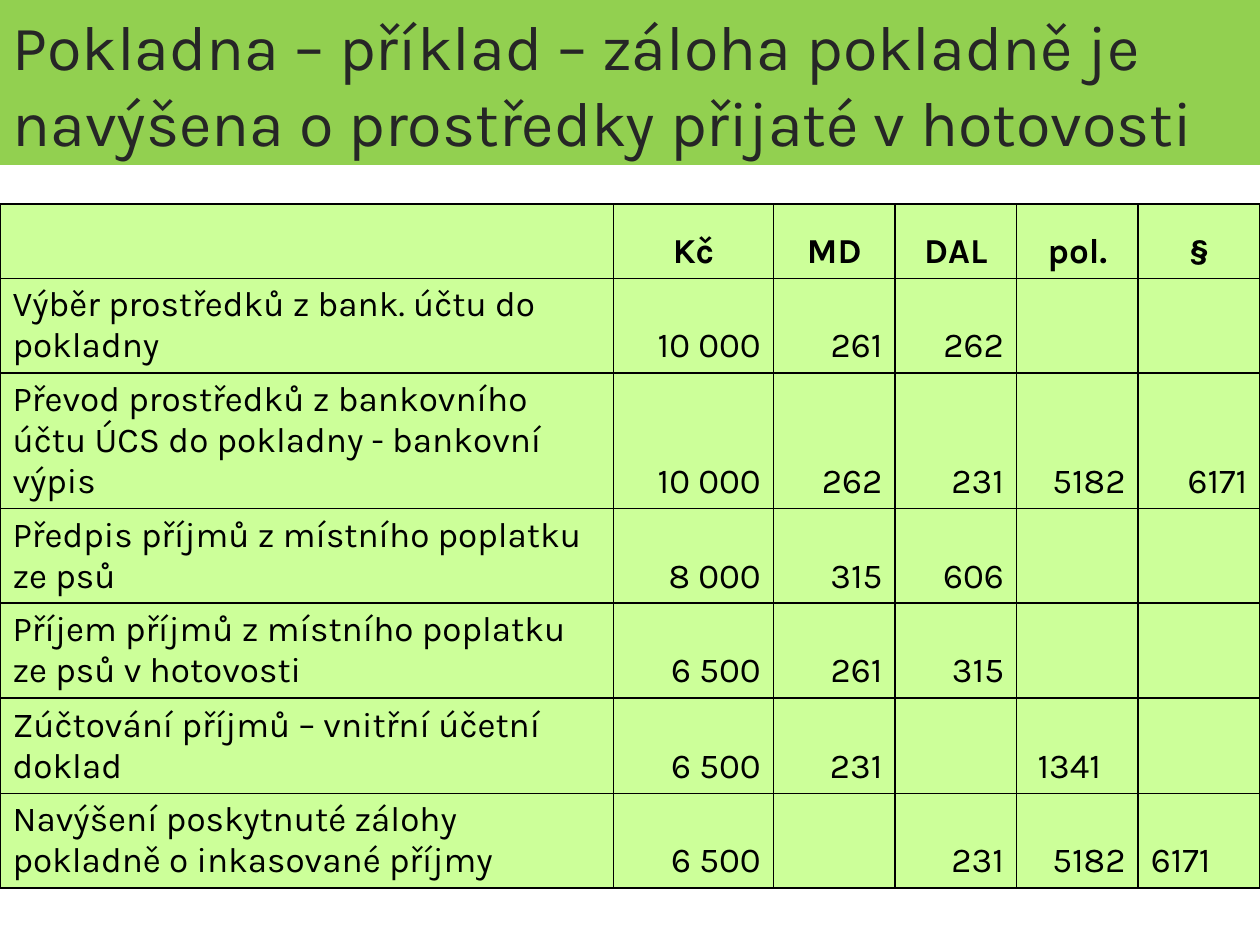
from lxml import etree
from pptx import Presentation
from pptx.dml.color import RGBColor
from pptx.enum.text import MSO_ANCHOR, MSO_AUTO_SIZE, PP_ALIGN
from pptx.oxml.ns import qn
from pptx.util import Pt

LEFT, MID, RIGHT = PP_ALIGN.LEFT, PP_ALIGN.CENTER, PP_ALIGN.RIGHT
BOTTOM = MSO_ANCHOR.BOTTOM
FIXED = MSO_AUTO_SIZE.NONE
FACE = "Karla"
HUES = {"band": "92D050", "title": "262626", "cell": "CCFF99", "ink": "000000"}
TITLE = ("Pokladna – příklad – záloha pokladně je navýšena "
         "o prostředky přijaté v hotovosti")
WIDTHS = [350.6, 91.4, 69.5, 69.5, 69.5, 69.5]
HEIGHTS = [42.5, 42.5, 46.8, 42.5, 46.8, 54.7, 46.8]
ROWS = [
    ["", "Kč", "MD", "DAL", "pol.", "§"],
    ["Výběr prostředků z bank. účtu do pokladny", "10 000", "261", "262", "", ""],
    ["Převod prostředků z bankovního účtu ÚCS do pokladny - bankovní výpis",
     "10 000", "262", "231", "5182", "6171"],
    ["Předpis příjmů z místního poplatku ze psů", "8 000", "315", "606", "", ""],
    ["Příjem příjmů z místního poplatku ze psů v hotovosti",
     "6 500", "261", "315", "", ""],
    ["Zúčtování příjmů – vnitřní účetní doklad", "6 500", "231", "", " 1341", ""],
    ["Navýšení poskytnuté zálohy pokladně o inkasované příjmy",
     "6 500", "", "231", "5182", "6171 "],
]
LOOSE = {(5, 4), (6, 5)}


def paint(part, hue):
    part.fill.solid()
    part.fill.fore_color.rgb = RGBColor.from_string(HUES[hue])


def style(para, align, hue, **form):
    para.alignment = align
    for key, value in form.items():
        setattr(para.font, key, value)
    para.font.color.rgb = RGBColor.from_string(HUES[hue])


def edge(cell):
    props = cell._tc.get_or_add_tcPr()
    for spot, side in enumerate(("a:lnL", "a:lnR", "a:lnT", "a:lnB")):
        line = etree.Element(qn(side), w=str(Pt(1)))
        fill = etree.SubElement(line, qn("a:solidFill"))
        etree.SubElement(fill, qn("a:srgbClr"), val=HUES["ink"])
        props.insert(spot, line)


def add_title(slide):
    title = slide.shapes.title
    title.left, title.top = Pt(0), Pt(0)
    title.width, title.height = Pt(720), Pt(94.3)
    paint(title, "band")
    frame = title.text_frame
    frame.text = TITLE
    frame.word_wrap = True
    frame.auto_size = FIXED
    frame.vertical_anchor = BOTTOM
    style(frame.paragraphs[0], LEFT, "title", name=FACE, size=Pt(36))


def fill_cell(cell, text, align, bold):
    paint(cell, "cell")
    edge(cell)
    cell.vertical_anchor = BOTTOM
    cell.text = text
    style(cell.text_frame.paragraphs[0], align, "ink",
          name=FACE, size=Pt(20), bold=bold)


def add_grid(slide):
    grid = slide.shapes.add_table(
        len(ROWS), len(WIDTHS), Pt(0), Pt(116.6),
        Pt(sum(WIDTHS)), Pt(sum(HEIGHTS))).table
    for col, width in zip(grid.columns, WIDTHS):
        col.width = Pt(width)
    for row, height in zip(grid.rows, HEIGHTS):
        row.height = Pt(height)
    for r, row in enumerate(ROWS):
        for c, text in enumerate(row):
            if r == 0:
                align = MID
            elif c == 0 or (r, c) in LOOSE:
                align = LEFT
            else:
                align = RIGHT
            fill_cell(grid.cell(r, c), text, align, r == 0)


def main():
    deck = Presentation()
    deck.slide_width, deck.slide_height = Pt(720), Pt(540)
    slide = deck.slides.add_slide(deck.slide_layouts[5])
    add_grid(slide)
    add_title(slide)
    deck.save("out.pptx")


if __name__ == "__main__":
    main()
